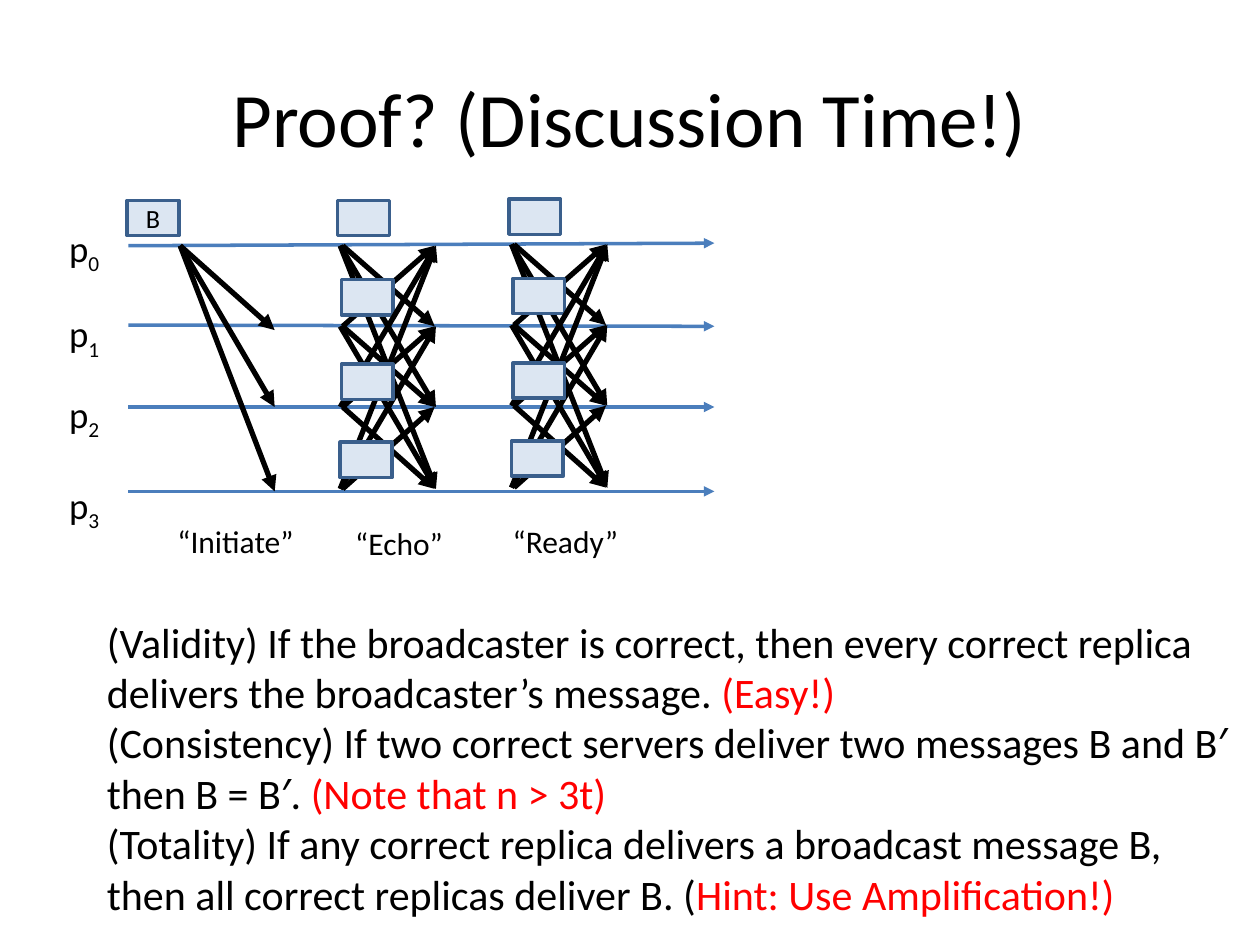
from pptx import Presentation
from pptx.dml.color import RGBColor as RGB
from pptx.enum.shapes import MSO_CONNECTOR as Link, MSO_SHAPE as Form
from pptx.enum.text import MSO_ANCHOR as Anchor, PP_ALIGN as Align
from pptx.oxml.ns import qn
from pptx.util import Pt
from lxml.etree import SubElement as Sub

BLACK = RGB(0, 0, 0)
RED = RGB(255, 0, 0)
BLUE = RGB(0x4B, 0x7E, 0xBC)
NAVY = RGB(0x3A, 0x5F, 0x8C)
PALE = RGB(0xDC, 0xE6, 0xF2)
ROWS = [195, 259, 323, 388]


class Deck:
    """Draws styled elements on one slide, with lengths in px of 1/100 inch."""

    PX = 9144
    FONT = "Calibri"

    def __init__(self, wide, high):
        self.prs = Presentation()
        self.prs.slide_width, self.prs.slide_height = self.emu(wide, high)
        self.slide = self.prs.slides.add_slide(self.prs.slide_layouts[6])

    def emu(self, *nums):
        return [n * self.PX for n in nums]

    def run(self, para, text, size, color=BLACK, sub=False):
        run = para.add_run()
        run.text = text
        font = run.font
        font.name, font.size = self.FONT, Pt(size)
        font.color.rgb = color
        if sub:
            font._element.set("baseline", "-25000")

    def text(self, area, paras, size, wrap=False, align=Align.LEFT, anchor=Anchor.TOP):
        frame = self.slide.shapes.add_textbox(*self.emu(*area)).text_frame
        frame.word_wrap, frame.vertical_anchor = wrap, anchor
        for i, runs in enumerate(paras):
            para = frame.add_paragraph() if i else frame.paragraphs[0]
            para.alignment = align
            for run in runs:
                self.run(para, run[0], size, *run[1:])

    def box(self, left, top, text=""):
        box = self.slide.shapes.add_shape(Form.RECTANGLE, *self.emu(left, top, 41, 28))
        box.shadow.inherit = False
        box.fill.solid()
        box.fill.fore_color.rgb = PALE
        box.line.color.rgb, box.line.width = NAVY, Pt(2)
        if text:
            frame = box.text_frame
            frame.vertical_anchor = Anchor.MIDDLE
            frame.paragraphs[0].alignment = Align.CENTER
            self.run(frame.paragraphs[0], text, 15)

    def arrow(self, x1, y1, x2, y2, color=BLACK, width=3):
        link = self.slide.shapes.add_connector(Link.STRAIGHT, *self.emu(x1, y1, x2, y2))
        link.line.color.rgb, link.line.width = color, Pt(width)
        Sub(link.line._get_or_add_ln(), qn("a:tailEnd"), type="triangle")
        Sub(link._element.spPr, qn("a:effectLst"))

    def cross(self, dx, dy, pairs):
        for a, b in pairs:
            inset = 2 if abs(a - b) == 1 else 0
            self.arrow(270 + inset + dx, ROWS[a] + dy, 346 - inset // 2 + dx, ROWS[b] + dy)

    def swap(self, dx, dy):
        self.cross(dx, dy, [(0, 3), (0, 2), (0, 1), (1, 2), (1, 3), (1, 0)])
        self.box(271 + dx, 222 + dy)
        self.cross(dx, dy, [(2, 1), (3, 2), (2, 3), (2, 0), (3, 1), (3, 0)])
        for left, top in [(271, 289), (270, 351), (268, 159)]:
            self.box(left + dx, top + dy)

    def save(self):
        self.prs.save("out.pptx")


def main():
    deck = Deck(1000, 750)
    deck.text((50, 30, 900, 125), [[("Proof? (Discussion Time!)",)]], 44,
              True, Align.CENTER, Anchor.MIDDLE)

    for y1, y2 in [(195, 193), (258, 259), (323, 323), (390, 390)]:
        deck.arrow(102, y1, 567, y2, BLUE, 2)
    for i, top in enumerate([174, 242, 306, 378]):
        deck.text((45, top, 46, 45), [[("p",), (str(i), BLACK, True)]], 21)

    deck.box(101, 159, "B")
    for y in (390, 323, 262):
        deck.arrow(143, 195, 218, y)
    deck.swap(0, 0)
    deck.swap(136, -1)

    for name, left, top, wide in [("“Initiate”", 131, 409, 113), ("“Echo”", 272, 411, 91),
                                  ("“Ready”", 397, 409, 105)]:
        deck.text((left, top, wide, 40), [[(name,)]], 18)

    deck.text((75, 484, 917, 252), [
        [("(Validity) If the broadcaster is correct, then every correct replica "
          "delivers the broadcaster’s message. ",), ("(Easy!)", RED)],
        [("(Consistency) If two correct servers deliver two messages B and B′ "
          "then B = B′. ",), ("(Note that n > 3t)", RED)],
        [("(Totality) If any correct replica delivers a broadcast message B, "
          "then all correct replicas deliver B. (",), ("Hint: Use Amplification!)", RED)],
    ], 24, True)
    deck.save()


if __name__ == "__main__":
    main()
